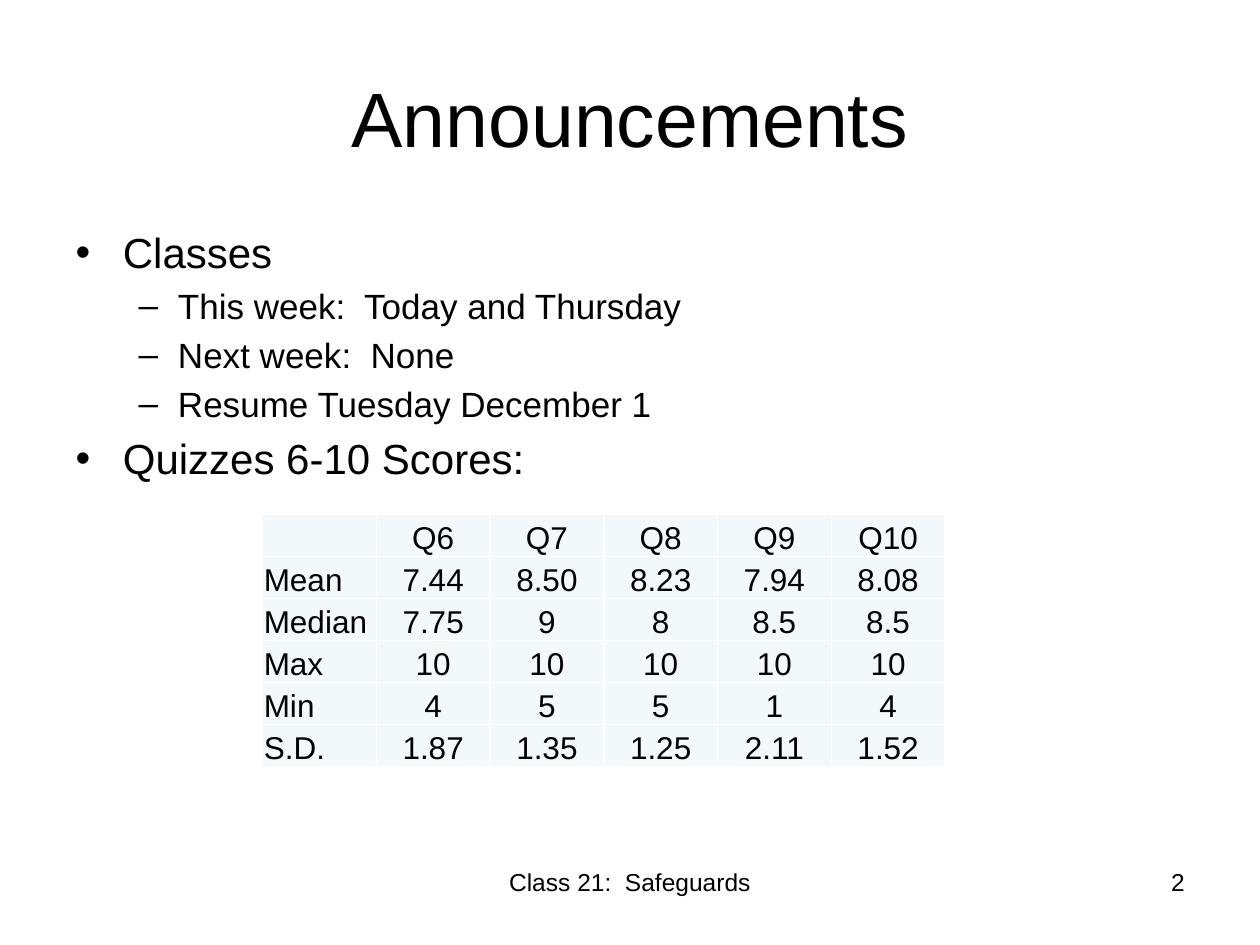
"""Build the announcements slide with the quiz score table."""
from lxml import etree
from pptx import Presentation
from pptx.dml.color import RGBColor
from pptx.enum.text import MSO_ANCHOR, MSO_AUTO_SIZE, PP_ALIGN
from pptx.oxml.ns import qn
from pptx.util import Pt

LEFT, CENTER, RIGHT = PP_ALIGN.LEFT, PP_ALIGN.CENTER, PP_ALIGN.RIGHT
BOTTOM, MIDDLE = MSO_ANCHOR.BOTTOM, MSO_ANCHOR.MIDDLE
NO_FIT = MSO_AUTO_SIZE.NONE


def color(value):
    return RGBColor.from_string(value)


def style(p, size, align):
    p.alignment = align
    for r in p.runs:
        r.font.name = "Arial"
        r.font.size = Pt(size)
        r.font.color.rgb = color("000000")


prs = Presentation()
prs.slide_width, prs.slide_height = Pt(720), Pt(540)
s = prs.slides.add_slide(prs.slide_layouts[1])

title = s.shapes.title
title.left, title.top, title.width, title.height = Pt(36), Pt(21.6), Pt(648), Pt(90)
tf = title.text_frame
tf.text = "Announcements"
tf.auto_size = NO_FIT
tf.vertical_anchor = MIDDLE
style(tf.paragraphs[0], 44, CENTER)

body = s.placeholders[1]
body.left, body.top, body.width, body.height = Pt(36), Pt(126), Pt(648), Pt(356.4)
items = [
    (0, "Classes"),
    (1, "This week:  Today and Thursday"),
    (1, "Next week:  None"),
    (1, "Resume Tuesday December 1"),
    (0, "Quizzes 6-10 Scores:"),
]
tf = body.text_frame
tf.text = "\n".join(text for level, text in items)
tf.auto_size = NO_FIT
for p, (level, text) in zip(tf.paragraphs, items):
    p.level = level
    style(p, 20 if level else 24, LEFT)

footers = [("Class 21:  Safeguards", 246, 228, CENTER), ("2", 516, 168, RIGHT)]
for text, left, width, align in footers:
    sp = s.shapes.add_textbox(Pt(left), Pt(492), Pt(width), Pt(37.5))
    tf = sp.text_frame
    tf.word_wrap = True
    tf.text = text
    style(tf.paragraphs[0], 14, align)

scores = [
    ["", "Q6", "Q7", "Q8", "Q9", "Q10"],
    ["Mean", "7.44", "8.50", "8.23", "7.94", "8.08"],
    ["Median", "7.75", "9", "8", "8.5", "8.5"],
    ["Max", "10", "10", "10", "10", "10"],
    ["Min", "4", "5", "5", "1", "4"],
    ["S.D.", "1.87", "1.35", "1.25", "2.11", "1.52"],
]
table = s.shapes.add_table(6, 6, Pt(150), Pt(294), Pt(390), Pt(144)).table
table.first_row = table.horz_banding = False
for i, row in enumerate(scores):
    for j, text in enumerate(row):
        cell = table.cell(i, j)
        cell.text = text
        cell.margin_left = cell.margin_top = cell.margin_right = Pt(0.75)
        cell.margin_bottom = 0
        cell.vertical_anchor = BOTTOM
        style(cell.text_frame.paragraphs[0], 18, CENTER if j else LEFT)
        tcPr = cell._tc.get_or_add_tcPr()
        for side in ("lnL", "lnR", "lnT", "lnB"):
            ln = etree.SubElement(tcPr, qn(f"a:{side}"), w=str(Pt(1)))
            fill = etree.SubElement(ln, qn("a:solidFill"))
            etree.SubElement(fill, qn("a:srgbClr"), val="FFFFFF")
        cell.fill.solid()
        cell.fill.fore_color.rgb = color("F3F9FA")

prs.save("out.pptx")
